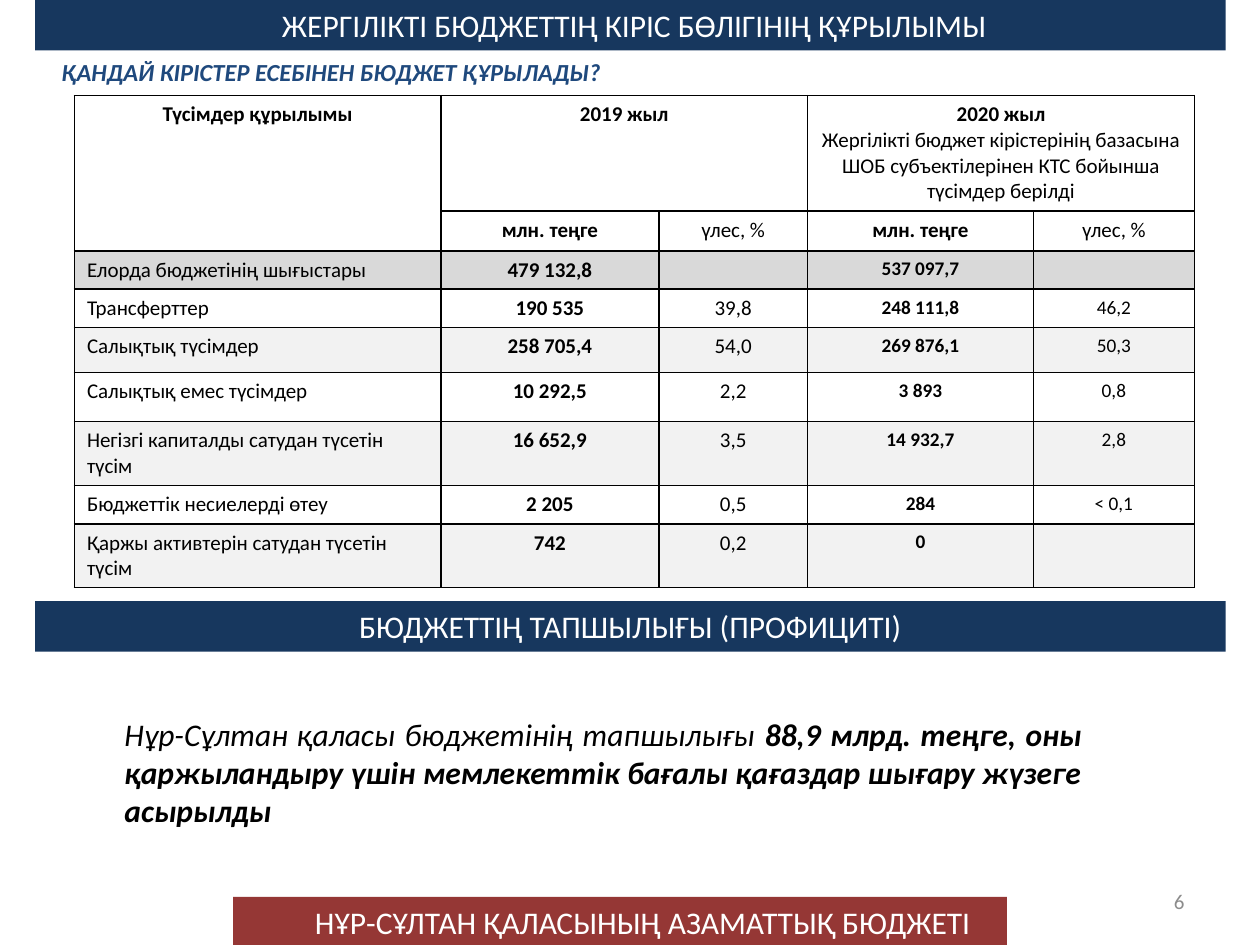
"""Builds the slide on the revenue structure and deficit of the local budget."""
from dataclasses import dataclass
from typing import Optional

from lxml.etree import SubElement
from pptx import Presentation
from pptx.dml.color import RGBColor
from pptx.enum.shapes import MSO_SHAPE
from pptx.enum.text import MSO_ANCHOR, MSO_AUTO_SIZE, PP_ALIGN
from pptx.oxml.ns import qn
from pptx.util import Cm, Pt

FONT = "Calibri"
COLORS = {
    "navy": "17375E",
    "red": "953735",
    "blue": "1F497D",
    "number": "8C8C8C",
    "total": "D9D9D9",
    "band": "F2F2F2",
    "white": "FFFFFF",
    "black": "000000",
}
BAR_HEIGHT = 1.02
COLUMN_WIDTHS = (7.39, 4.39, 3.0, 4.55, 3.25)
ROW_HEIGHTS = (2.29, 0.81, 0.76, 0.76, 0.91, 0.99, 1.27, 0.76, 1.27)


@dataclass(frozen=True)
class Box:
    left: float
    top: float
    width: float
    height: float = BAR_HEIGHT


@dataclass(frozen=True)
class TextRun:
    text: str
    size: float = 12
    color: str = "black"
    bold: bool = False
    italic: bool = False


@dataclass(frozen=True)
class Label:
    box: Box
    runs: tuple[TextRun, ...]
    alignment: PP_ALIGN = PP_ALIGN.CENTER
    anchor: MSO_ANCHOR = MSO_ANCHOR.TOP


@dataclass(frozen=True)
class Revenue:
    name: str
    amount_2019: str
    share_2019: str
    amount_2020: str
    share_2020: str


TITLE = Label(Box(2.59, 0, 20.4), (TextRun("ЖЕРГІЛІКТІ БЮДЖЕТТІҢ КІРІС БӨЛІГІНІҢ ҚҰРЫЛЫМЫ", 18, "white"),))
BARS = (
    (Box(4.7, 18.08, 15.6), "red"),
    (Box(0.71, 0, 24), "navy"),
    (Box(0.71, 12.12, 24), "navy"),
)
LABELS = (
    Label(Box(6.1, 18.08, 17.4), (TextRun("НҰР-СҰЛТАН ҚАЛАСЫНЫҢ АЗАМАТТЫҚ БЮДЖЕТІ", 18, "white"),),
          PP_ALIGN.JUSTIFY),
    Label(Box(0.48, 1.02, 12.4, 0.86),
          (TextRun("ҚАНДАЙ КІРІСТЕР ЕСЕБІНЕН БЮДЖЕТ ҚҰРЫЛАДЫ?", 14, "blue", True, True),)),
    Label(Box(18.21, 17.65, 5.92), (TextRun("6", 12, "number"),), PP_ALIGN.RIGHT, MSO_ANCHOR.MIDDLE),
    Label(Box(2.26, 14.29, 19.8, 2.55), (
        TextRun("Нұр-Сұлтан қаласы бюджетінің тапшылығы ", 18, italic=True),
        TextRun("88,9 млрд. теңге, оны қаржыландыру үшін мемлекеттік бағалы қағаздар "
                "шығару жүзеге асырылды", 18, bold=True, italic=True),
    ), PP_ALIGN.JUSTIFY),
    Label(Box(5.51, 12.12, 14.4), (TextRun("БЮДЖЕТТІҢ ТАПШЫЛЫҒЫ (ПРОФИЦИТІ)", 18, "white"),)),
)
REVENUES = (
    Revenue("Елорда бюджетінің шығыстары", "479 132,8", "", "537 097,7", ""),
    Revenue("Трансферттер", "190 535", "39,8", "248 111,8", "46,2"),
    Revenue("Салықтық түсімдер", "258 705,4", "54,0", "269 876,1", "50,3"),
    Revenue("Салықтық емес түсімдер", "10 292,5", "2,2", "3 893", "0,8"),
    Revenue("Негізгі капиталды сатудан түсетін түсім", "16 652,9", "3,5", "14 932,7", "2,8"),
    Revenue("Бюджеттік несиелерді өтеу", "2 205", "0,5", "284", "< 0,1"),
    Revenue("Қаржы активтерін сатудан түсетін түсім", "742", "0,2", "0", ""),
)


def color_of(name: str) -> RGBColor:
    return RGBColor.from_string(COLORS[name])


def lengths(box: Box) -> tuple:
    return Cm(box.left), Cm(box.top), Cm(box.width), Cm(box.height)


def write_paragraph(paragraph, runs: tuple[TextRun, ...], alignment: PP_ALIGN) -> None:
    paragraph.alignment = alignment
    for item in runs:
        run = paragraph.add_run()
        run.text = item.text
        run.font.name = FONT
        run.font.size = Pt(item.size)
        run.font.bold = item.bold
        run.font.italic = item.italic
        run.font.color.rgb = color_of(item.color)


def fill_label(shape, label: Label) -> None:
    shape.left, shape.top, shape.width, shape.height = lengths(label.box)
    text_frame = shape.text_frame
    text_frame.word_wrap = True
    text_frame.auto_size = MSO_AUTO_SIZE.NONE
    text_frame.vertical_anchor = label.anchor
    write_paragraph(text_frame.paragraphs[0], label.runs, label.alignment)


def add_bar(slide, box: Box, color: str) -> None:
    bar = slide.shapes.add_shape(MSO_SHAPE.RECTANGLE, *lengths(box))
    bar.shadow.inherit = False
    bar.fill.solid()
    bar.fill.fore_color.rgb = color_of(color)
    bar.line.fill.background()


def style_cell(cell, color: str) -> None:
    properties = cell._tc.get_or_add_tcPr()
    for side in ("lnL", "lnR", "lnT", "lnB"):
        line = SubElement(properties, qn(f"a:{side}"), w=str(Pt(1)))
        fill = SubElement(line, qn("a:solidFill"))
        SubElement(fill, qn("a:srgbClr"), val=COLORS["black"])
    cell.fill.solid()
    cell.fill.fore_color.rgb = color_of(color)


def write_cell(cell, item: TextRun, alignment: PP_ALIGN = PP_ALIGN.CENTER) -> None:
    paragraph = cell.text_frame.paragraphs[0]
    if item.text:
        write_paragraph(paragraph, (item,), alignment)
    else:
        SubElement(paragraph._p, qn("a:endParaRPr"), sz=str(item.size * 100))


def add_revenue_table(slide) -> None:
    box = Box(1.5, 1.93, sum(COLUMN_WIDTHS), sum(ROW_HEIGHTS))
    table = slide.shapes.add_table(len(ROW_HEIGHTS), len(COLUMN_WIDTHS), *lengths(box)).table
    for column, width in zip(table.columns, COLUMN_WIDTHS):
        column.width = Cm(width)
    for index, (row, height) in enumerate(zip(table.rows, ROW_HEIGHTS)):
        row.height = Cm(height)
        color = "total" if index == 2 else "band" if index > 2 and index % 2 == 0 else "white"
        for cell in row.cells:
            style_cell(cell, color)

    table.cell(0, 0).merge(table.cell(1, 0))
    write_cell(table.cell(0, 0), TextRun("Түсімдер құрылымы", bold=True))
    for column, year in ((1, "2019 жыл"), (3, "2020 жыл")):
        table.cell(0, column).merge(table.cell(0, column + 1))
        write_cell(table.cell(0, column), TextRun(year, bold=True))
        write_cell(table.cell(1, column), TextRun("млн. теңге", bold=True))
        write_cell(table.cell(1, column + 1), TextRun("үлес, %"))
    note = TextRun("Жергілікті бюджет кірістерінің базасына ШОБ субъектілерінен КТС бойынша түсімдер берілді")
    write_paragraph(table.cell(0, 3).text_frame.add_paragraph(), (note,), PP_ALIGN.CENTER)

    for row, revenue in enumerate(REVENUES, start=2):
        write_cell(table.cell(row, 0), TextRun(revenue.name), PP_ALIGN.LEFT)
        write_cell(table.cell(row, 1), TextRun(revenue.amount_2019, bold=True))
        write_cell(table.cell(row, 2), TextRun(revenue.share_2019))
        write_cell(table.cell(row, 3), TextRun(revenue.amount_2020, 11, bold=True))
        write_cell(table.cell(row, 4), TextRun(revenue.share_2020, 11))


def main() -> None:
    presentation = Presentation()
    presentation.slide_width = Cm(25.4)
    presentation.slide_height = Cm(19.05)
    slide = presentation.slides.add_slide(presentation.slide_layouts[5])
    for box, color in BARS:
        add_bar(slide, box, color)
    title = slide.shapes.title
    fill_label(title, TITLE)
    slide.shapes._spTree.append(title._element)
    add_revenue_table(slide)
    for label in LABELS:
        fill_label(slide.shapes.add_textbox(*lengths(label.box)), label)
    presentation.save("out.pptx")


if __name__ == "__main__":
    main()
